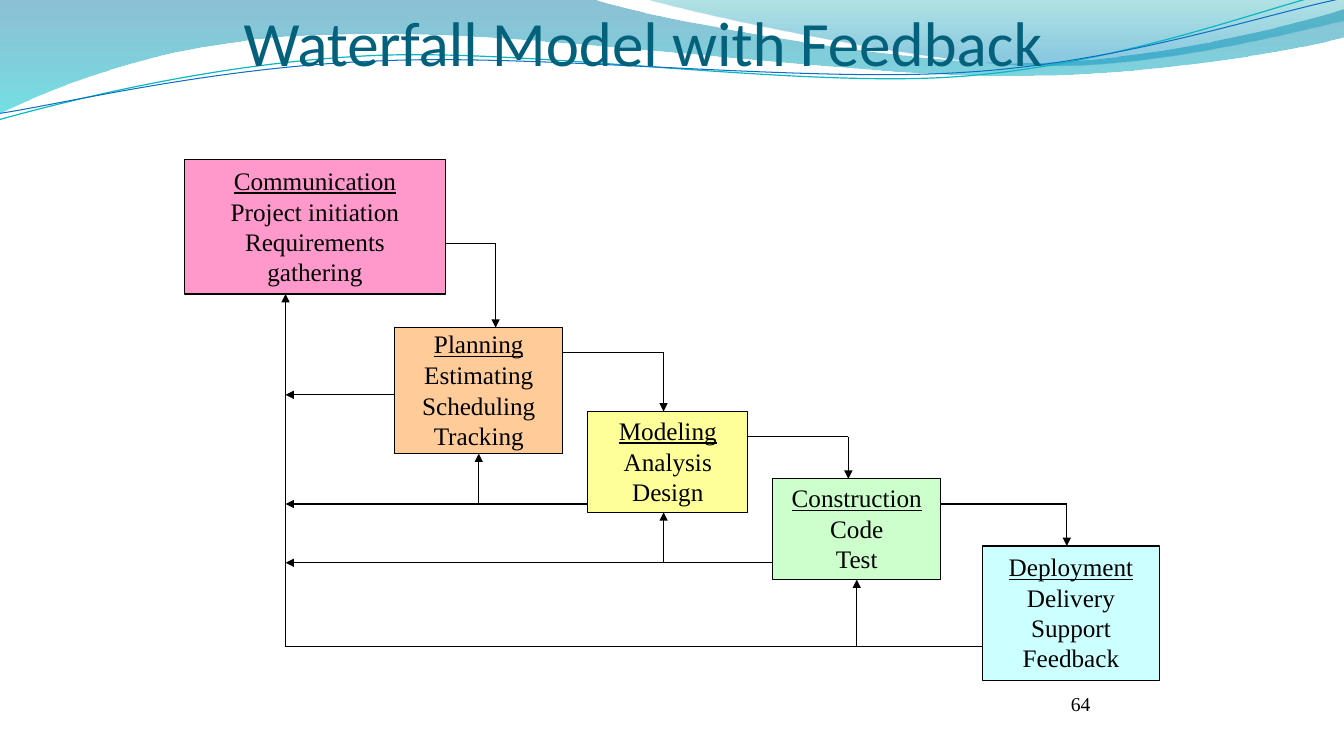
from itertools import pairwise
from lxml.etree import SubElement
from pptx import Presentation
from pptx.dml.color import RGBColor
from pptx.enum.shapes import MSO_CONNECTOR as CONN, MSO_SHAPE as SHAPE
from pptx.enum.text import MSO_ANCHOR as ANCHOR, PP_ALIGN as ALIGN
from pptx.oxml.ns import qn
from pptx.util import Pt

PX = 9525
WIDTH, HEIGHT = 1280, 720
COLORS = {
    "ink": "000000", "title": "04617B",
    "pink": "FF99CC", "orange": "FFCC99", "yellow": "FFFF99",
    "green": "CCFFCC", "cyan": "CCFFFF",
    "deep": "0074A1", "aqua": "00C6CF", "teal": "00A1A9", "blue": "008BBF",
    "wave_teal": "0AB8BF", "wave_blue": "0F6FC6",
}
SERIF, SANS = "Times New Roman", "Calibri"

TITLE = "Waterfall Model with Feedback"
PAGE = "64"

PHASES = [
    ((176, 152, 248, 128), "pink", ["Communication", "Project initiation", "Requirements gathering"]),
    ((376, 312, 160, 120), "orange", ["Planning", "Estimating", "Scheduling", "Tracking"]),
    ((560, 392, 152, 96), "yellow", ["Modeling", "Analysis", "Design"]),
    ((736, 456, 160, 96), "green", ["Construction", "Code", "Test"]),
    ((936, 520, 168, 128), "cyan", ["Deployment", "Delivery", "Support", "Feedback"]),
]
FORWARD = [(472, 232), (632, 336), (808, 416), (1016, 480)]
TRUNK_X = 272
FEEDBACK_Y = [376, 480, 536, 616]
RISER_X = [456, 632, 816]

BANDS = [
    ([(0, -1), (564, -1),
      ((609, 16), (850, 60), (971, 60)), ((1092, 60), (1227, 25), (1280, 9)),
      (1282, 35),
      ((1259, 42), (1114, 73), (954, 72)), ((796, 72), (489, 27), (329, 33)),
      ((165, 34), (59, 80), (-1, 108))],
     [("deep", 0, 45), ("aqua", 1, 55)]),
    ([(613, -1),
      ((652, 11), (873, 60), (984, 62)), ((1095, 66), (1231, 31), (1280, 20)),
      (1280, 0)],
     [("teal", 0, 30), ("blue", 0.8, 45)]),
]
WAVES = [
    ([(-1, 114), ((61, 97), (203, 60), (354, 53)),
      ((506, 46), (758, 84), (912, 73)), ((1066, 62), (1202, 8), (1278, -10))],
     "wave_teal", 0.85),
    ([(0, 108), ((60, 99), (209, 63), (363, 58)),
      ((516, 51), (764, 79), (917, 69)), ((1070, 60), (1205, 13), (1281, -2))],
     "wave_blue", 0.75),
]


def rgb(name):
    return RGBColor.from_string(COLORS[name])


def emu(*lengths):
    return [round(v * PX) for v in lengths]


def set_line(line, color, width=0.75):
    line.color.rgb = rgb(color)
    line.width = Pt(width)


def add_outline(path, close):
    steps = [step if len(step) == 3 else (step,) for step in path[1:]]
    builder = shapes.build_freeform(*emu(*path[0]))
    builder.add_line_segments([emu(*point) for step in steps for point in step], close=close)
    sp = builder.convert_to_shape()
    sp.shadow.inherit = False
    segments = iter(sp._element.xpath(".//a:path/a:lnTo"))
    for step in steps:
        group = [next(segments) for _ in step]
        if len(group) == 3:
            curve = group[0].makeelement(qn("a:cubicBezTo"))
            group[0].addprevious(curve)
            for segment in group:
                curve.append(segment[0])
                segment.getparent().remove(segment)
    return sp


def add_band(path, stops):
    sp = add_outline(path, True)
    sp.line.fill.background()
    sp.fill.gradient()
    sp.fill.gradient_angle = 270
    for stop, (color, position, _) in zip(sp.fill.gradient_stops, stops):
        stop.color.rgb = rgb(color)
        stop.position = position
    for clr, (_, _, alpha) in zip(sp._element.xpath(".//a:gs/a:srgbClr"), stops):
        SubElement(clr, qn("a:alpha")).set("val", str(alpha * 1000))


def add_wave(path, color, width):
    sp = add_outline(path, False)
    sp.fill.background()
    set_line(sp.line, color, width)


def set_text(sp, lines, font, size, color, align, anchor):
    tf = sp.text_frame
    tf.word_wrap = True
    tf.vertical_anchor = anchor
    tf.text = "\n".join(lines)
    tf.paragraphs[0].line_spacing = 0.95
    for p in tf.paragraphs:
        p.alignment = align
        for r in p.runs:
            r.font.name = font
            r.font.size = Pt(size)
            r.font.color.rgb = rgb(color)
    return tf


def add_phase(box, color, lines):
    sp = shapes.add_shape(SHAPE.RECTANGLE, *emu(*box))
    sp.shadow.inherit = False
    sp.fill.solid()
    sp.fill.fore_color.rgb = rgb(color)
    set_line(sp.line, "ink")
    tf = set_text(sp, lines, SERIF, 18, "ink", ALIGN.CENTER, ANCHOR.MIDDLE)
    tf.paragraphs[0].runs[0].font.underline = True


def add_route(*points, arrow=True):
    for start, end in pairwise(points):
        line = shapes.add_connector(CONN.STRAIGHT, *emu(*start, *end))
        set_line(line.line, "ink")
        if arrow and end == points[-1]:
            SubElement(line.line._get_or_add_ln(), qn("a:tailEnd")).set("type", "triangle")
        SubElement(line._element.spPr, qn("a:effectLst"))


prs = Presentation()
prs.slide_width, prs.slide_height = emu(WIDTH, HEIGHT)
shapes = prs.slides.add_slide(prs.slide_layouts[6]).shapes

for band in BANDS:
    add_band(*band)
for wave in WAVES:
    add_wave(*wave)

number = shapes.add_textbox(*emu(848, 656, 200, 32))
set_text(number, [PAGE], SERIF, 14, "ink", ALIGN.RIGHT, ANCHOR.TOP)
title = shapes.add_textbox(*emu(232, 5, 816, 143))
tf = set_text(title, [TITLE], SANS, 45, "title", ALIGN.LEFT, ANCHOR.TOP)
tf.margin_left = tf.margin_right = 0
tf.margin_top = 4 * PX

for phase in PHASES:
    add_phase(*phase)

boxes = [box for box, _, _ in PHASES]
for (left, _, width, _), (_, next_top, _, _), (x, y) in zip(boxes, boxes[1:], FORWARD):
    add_route((left + width, y), (x, y), (x, next_top))

for (left, _, _, _), y in zip(boxes[1:], FEEDBACK_Y):
    add_route((left, y), (TRUNK_X, y), arrow=y != FEEDBACK_Y[-1])
add_route((TRUNK_X, FEEDBACK_Y[-1]), (TRUNK_X, boxes[0][1] + boxes[0][3]))

for (_, top, _, height), x, y in zip(boxes[1:], RISER_X, FEEDBACK_Y[1:]):
    add_route((x, y), (x, top + height))

prs.save("out.pptx")
